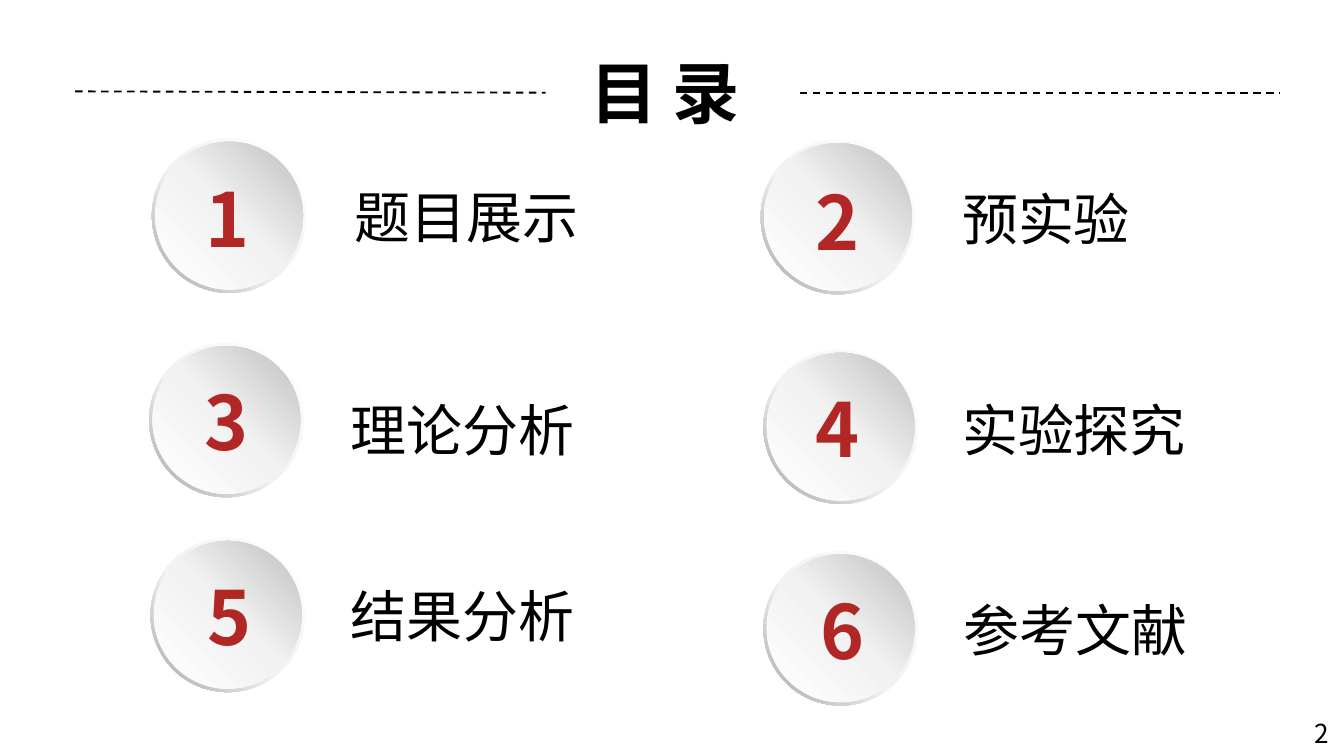
from lxml import etree
from pptx import Presentation
from pptx.dml.color import RGBColor
from pptx.enum.dml import MSO_LINE
from pptx.enum.shapes import MSO_CONNECTOR, MSO_SHAPE
from pptx.enum.text import MSO_ANCHOR, MSO_AUTO_SIZE, PP_ALIGN
from pptx.oxml import parse_xml
from pptx.oxml.ns import nsdecls, qn
from pptx.util import Inches, Pt

BLACK = RGBColor(0x00, 0x00, 0x00)
RED = RGBColor(0xB1, 0x27, 0x25)
WHITE, PALE, SILVER, GREY = (RGBColor(v, v, v) for v in (0xFF, 0xF2, 0xBF, 0xA6))
FONT = "Noto Sans CJK SC"

# Sizes of one agenda entry
RING, DISC = 1.15, 1.1
INSET = (RING - DISC) / 2

# Label, then left and top of the ring, the number and the label; row by row
ENTRIES = (
    ("题目展示", (1.13, 1.03), (1.42, 1.24), (2.54, 1.31)),
    ("预实验", (5.66, 1.04), (5.96, 1.26), (7.06, 1.32)),
    ("理论分析", (1.11, 2.55), (1.41, 2.75), (2.51, 2.89)),
    ("实验探究", (5.68, 2.6), (5.96, 2.8), (7.06, 2.89)),
    ("结果分析", (1.12, 4.0), (1.43, 4.2), (2.51, 4.28)),
    ("参考文献", (5.68, 4.1), (5.99, 4.3), (7.07, 4.38)),
)


def write(sp, text, size, color=BLACK, bold=False, align=PP_ALIGN.LEFT, **frame):
    tf = sp.text_frame
    for name, value in frame.items():
        setattr(tf, name, value)
    p = tf.paragraphs[0]
    p.alignment = align
    r = p.add_run()
    r.text = text
    for name, value in {"name": FONT, "size": Pt(size), "bold": bold}.items():
        setattr(r.font, name, value)
    r.font.color.rgb = color
    etree.SubElement(r.font._element, qn("a:ea"), typeface=FONT)


def add_round(kind, x, y, size, stops, angle):
    sp = s.shapes.add_shape(kind, *map(Inches, (x, y, size, size)))
    sp.shadow.inherit = False
    sp.line.fill.background()
    marks = "".join(f'<a:gs pos="{pos * 1000}"><a:srgbClr val="{color}"/></a:gs>'
                    for pos, color in stops)
    sp._element.spPr.find(qn("a:prstGeom")).addnext(parse_xml(
        f'<a:gradFill {nsdecls("a")}><a:gsLst>{marks}</a:gsLst>'
        f'<a:lin ang="{angle * 60000}" scaled="0"/></a:gradFill>'))
    return sp


# Widescreen slide, 16 to 9
prs = Presentation()
prs.slide_width, prs.slide_height = Inches(10), Inches(10 * 9 / 16)
s = prs.slides.add_slide(prs.slide_layouts[5])

# Dashed rules on both sides of the title
for x1, y1, x2, y2 in ((0.56, 0.68, 4.06, 0.69), (5.95, 0.69, 9.52, 0.69)):
    rule = s.shapes.add_connector(MSO_CONNECTOR.STRAIGHT, *map(Inches, (x1, y1, x2, y2)))
    rule.line.color.rgb = BLACK
    rule.line.width = Pt(1)
    rule.line.dash_style = MSO_LINE.DASH
    etree.SubElement(rule._element.spPr, qn("a:effectLst"))

# Title
title = s.shapes.title
title.left, title.top, title.width, title.height = map(Inches, (3.9, 0.38, 2.21, 0.61))
write(title, "目 录 ", 36, bold=True, align=PP_ALIGN.CENTER, word_wrap=True,
      auto_size=MSO_AUTO_SIZE.NONE, vertical_anchor=MSO_ANCHOR.TOP,
      margin_left=0, margin_right=0, margin_top=0, margin_bottom=0)

# Agenda entries: ring, disc, number and label
for i, (label, (x, y), number_at, label_at) in enumerate(ENTRIES, 1):
    ring = add_round(MSO_SHAPE.DONUT, x, y, RING,
                     ((0, WHITE), (55, PALE), (100, GREY)), 135)
    ring.adjustments[0] = 0.049
    add_round(MSO_SHAPE.OVAL, x + INSET, y + INSET, DISC,
              ((0, WHITE), (51, PALE), (100, SILVER)), 315)
    number = s.shapes.add_textbox(*map(Inches, (*number_at, 0.55, 0.77)))
    write(number, str(i), 40, RED, True, PP_ALIGN.CENTER, word_wrap=False)
    caption = s.shapes.add_textbox(*map(Inches, (*label_at, 2.5, 0.61)))
    write(caption, label, 30, word_wrap=True)

# Page number
page = s.shapes.add_textbox(*map(Inches, (9.68, 5.29, 0.32, 0.34)))
write(page, "2", 14, word_wrap=False)

prs.save("out.pptx")
